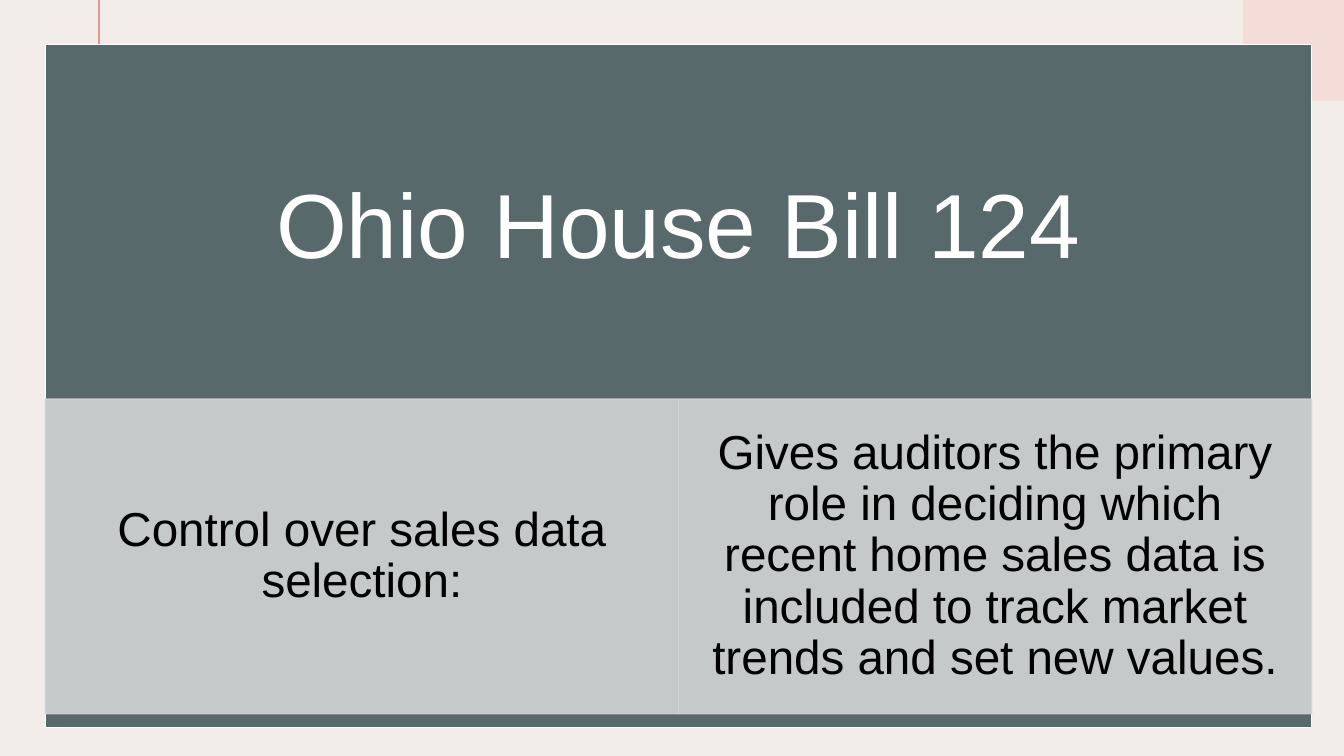
from pptx import Presentation, util as u
from pptx.dml.color import RGBColor
from pptx.enum import shapes, text
from pptx.oxml.ns import qn
from lxml import etree

PX = 9144  # 100 px to the inch
HUES = {"back": "F3EDEA", "blush": "F4DDD8", "rose": "DF998B", "slate": "58696B",
        "mist": "D1D4D4", "white": "FFFFFF", "black": "000000"}


def add_rect(box, fill, line=None):
    rect = slide.shapes.add_shape(shapes.MSO_SHAPE.RECTANGLE, *[n * PX for n in box])
    rect.shadow.inherit = False
    rect.fill.solid()
    rect.fill.fore_color.rgb = RGBColor.from_string(HUES[fill])
    if line:
        rect.line.color.rgb = RGBColor.from_string(HUES[line])
        rect.line.width = u.Pt(1)
    else:
        rect.line.fill.background()
    return rect


def write(shape, words, size, hue, pad_x, pad_y):
    frame = shape.text_frame
    frame.word_wrap = True
    frame.vertical_anchor = text.MSO_ANCHOR.MIDDLE
    frame.margin_left = frame.margin_right = pad_x * PX
    frame.margin_top = frame.margin_bottom = pad_y * PX
    para = frame.paragraphs[0]
    para.alignment = text.PP_ALIGN.CENTER
    para.line_spacing = 0.9
    run = para.add_run()
    run.text = words
    run.font.name = "Arial"
    run.font.size = u.Pt(size)
    run.font.color.rgb = RGBColor.from_string(HUES[hue])


deck = Presentation()
deck.slide_width, deck.slide_height = 1333 * PX, 750 * PX
slide = deck.slides.add_slide(deck.slide_layouts[6])
slide.background.fill.solid()
slide.background.fill.fore_color.rgb = RGBColor.from_string(HUES["back"])

# Corner block and upright rule
add_rect((1233, 0, 100, 100), "blush")
rule = slide.shapes.add_connector(shapes.MSO_CONNECTOR.STRAIGHT, 98 * PX, 0, 98 * PX, 650 * PX)
rule.line.color.rgb = RGBColor.from_string(HUES["rose"])
rule.line.width = u.Pt(1.5)
etree.SubElement(rule.element.spPr, qn("a:effectLst"))

# Panel with title
left, top, wide = 45, 44, 1256
add_rect((left, top, wide, 678), "slate", "white")
title = slide.shapes.add_textbox(left * PX, top * PX, wide * PX, 366 * PX)
write(title, "Ohio House Bill 124", 65, "white", 51, 51)

# Two translucent cards side by side
half = wide // 2
cards = ["Control over sales data selection:",
         "Gives auditors the primary role in deciding which recent home sales data "
         "is included to track market trends and set new values."]
for col, words in enumerate(cards):
    card = add_rect((left + col * half, 396, half, 312), "mist", "mist")
    for tint in card.element.spPr.iter(qn("a:srgbClr")):
        etree.SubElement(tint, qn("a:alpha"), val="90000")
    write(card, words, 34, "black", 26, 5)

deck.save("out.pptx")
